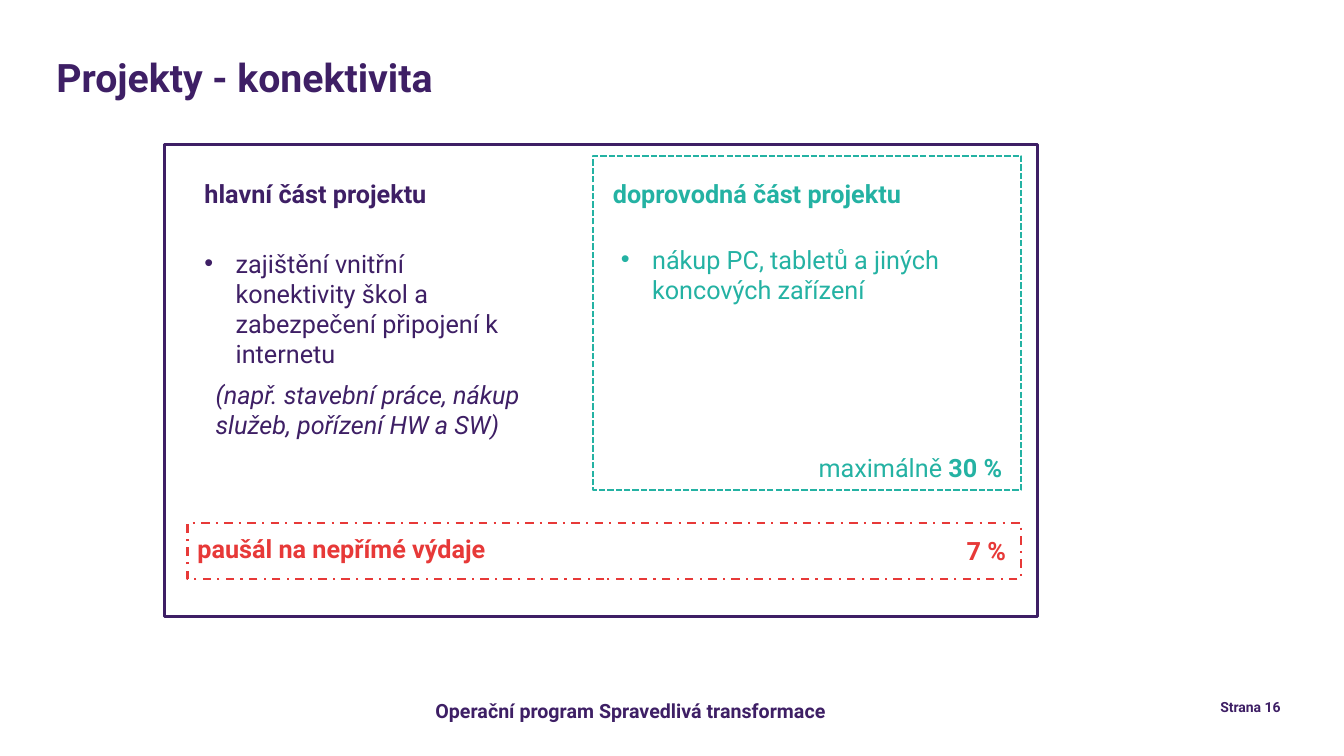
from lxml import etree
from pptx import Presentation, util as u
from pptx.dml.color import RGBColor
from pptx.enum import dml, shapes, text
from pptx.oxml.ns import qn

PX = 9144  # EMU in one px, 100 px to the inch
PURPLE = RGBColor(0x3E, 0x1F, 0x65)
TEAL = RGBColor(0x24, 0xB2, 0xA3)
RED = RGBColor(0xE7, 0x39, 0x38)


def scale(*lengths):
    return [u.Emu(n * PX) for n in lengths]


class Deck:
    font = "Roboto"

    def __init__(self, width, height):
        self.prs = Presentation()
        self.prs.slide_width, self.prs.slide_height = scale(width, height)
        self.slide = self.prs.slides.add_slide(self.prs.slide_layouts[5])

    def style(self, run, color, size, bold=False, italic=False):
        font = run.font
        font.name, font.size = self.font, u.Pt(size)
        font.color.rgb = color
        font.bold, font.italic = bold, italic

    def title(self, box, words):
        shape = self.slide.shapes.title
        shape.left, shape.top, shape.width, shape.height = scale(*box)
        frame = shape.text_frame
        frame.text = words
        frame.auto_size = text.MSO_AUTO_SIZE.NONE
        frame.vertical_anchor = text.MSO_ANCHOR.TOP
        para = frame.paragraphs[0]
        para.alignment = text.PP_ALIGN.LEFT
        para.line_spacing = 0.9
        self.style(para.runs[0], PURPLE, 28, bold=True)

    def label(self, box, words, color, size=18, bold=False, italic=False,
              wrap=False):
        shape = self.slide.shapes.add_textbox(*scale(*box))
        frame = shape.text_frame
        frame.text = words
        frame.word_wrap = wrap
        frame.auto_size = text.MSO_AUTO_SIZE.SHAPE_TO_FIT_TEXT
        para = frame.paragraphs[0]
        self.style(para.runs[0], color, size, bold, italic)
        return para

    def bullet(self, box, words, color):
        para = self.label(box, words, color, wrap=True)
        props = para._p.get_or_add_pPr()
        indent = 31 * PX
        props.set("marL", str(indent))
        props.set("indent", str(-indent))
        etree.SubElement(props, qn("a:buFont")).set("typeface", "Arial")
        etree.SubElement(props, qn("a:buChar")).set("char", "•")

    def frame(self, box, color, weight, dash=None):
        rect = self.slide.shapes.add_shape(
            shapes.MSO_SHAPE.RECTANGLE, *scale(*box))
        rect.shadow.inherit = False
        rect.fill.background()
        rect.line.color.rgb = color
        rect.line.width = u.Pt(weight)
        if dash:
            rect.line.dash_style = dash


def main():
    deck = Deck(1333, 750)
    deck.title((46, 53, 1234, 75), "Projekty - konektivita")
    deck.label((422, 688, 430, 34), "Operační program Spravedlivá transformace",
               PURPLE, 14, bold=True)
    page = deck.label((942, 688, 338, 25), "Strana 16", PURPLE, 10,
                      bold=True, wrap=True)
    page.alignment = text.PP_ALIGN.RIGHT

    deck.frame((163, 143, 866, 469), PURPLE, 2.25)
    deck.frame((588, 155, 425, 331), TEAL, 1.5, dml.MSO_LINE.SQUARE_DOT)
    deck.frame((186, 519, 827, 55), RED, 1.5, dml.MSO_LINE.DASH_DOT)

    deck.label((193, 172, 254, 40), "hlavní část projektu", PURPLE, bold=True)
    deck.bullet((193, 241, 343, 101),
                "zajištění vnitřní konektivity škol a zabezpečení připojení "
                "k internetu", PURPLE)
    deck.label((204, 371, 343, 71),
               "(např. stavební práce, nákup služeb, pořízení HW a SW)",
               PURPLE, italic=True, wrap=True)

    deck.label((598, 172, 327, 40), "doprovodná část projektu", TEAL, bold=True)
    deck.bullet((606, 237, 343, 71),
                "nákup PC, tabletů a jiných koncových zařízení", TEAL)
    limit = deck.label((802, 444, 205, 40), "maximálně ", TEAL)
    share = limit.add_run()
    share.text = "30 %"
    deck.style(share, TEAL, 18, bold=True)

    deck.label((186, 524, 322, 40), "paušál na nepřímé výdaje", RED, bold=True)
    deck.label((949, 526, 64, 40), "7 %", RED, bold=True)
    deck.prs.save("out.pptx")


if __name__ == "__main__":
    main()
